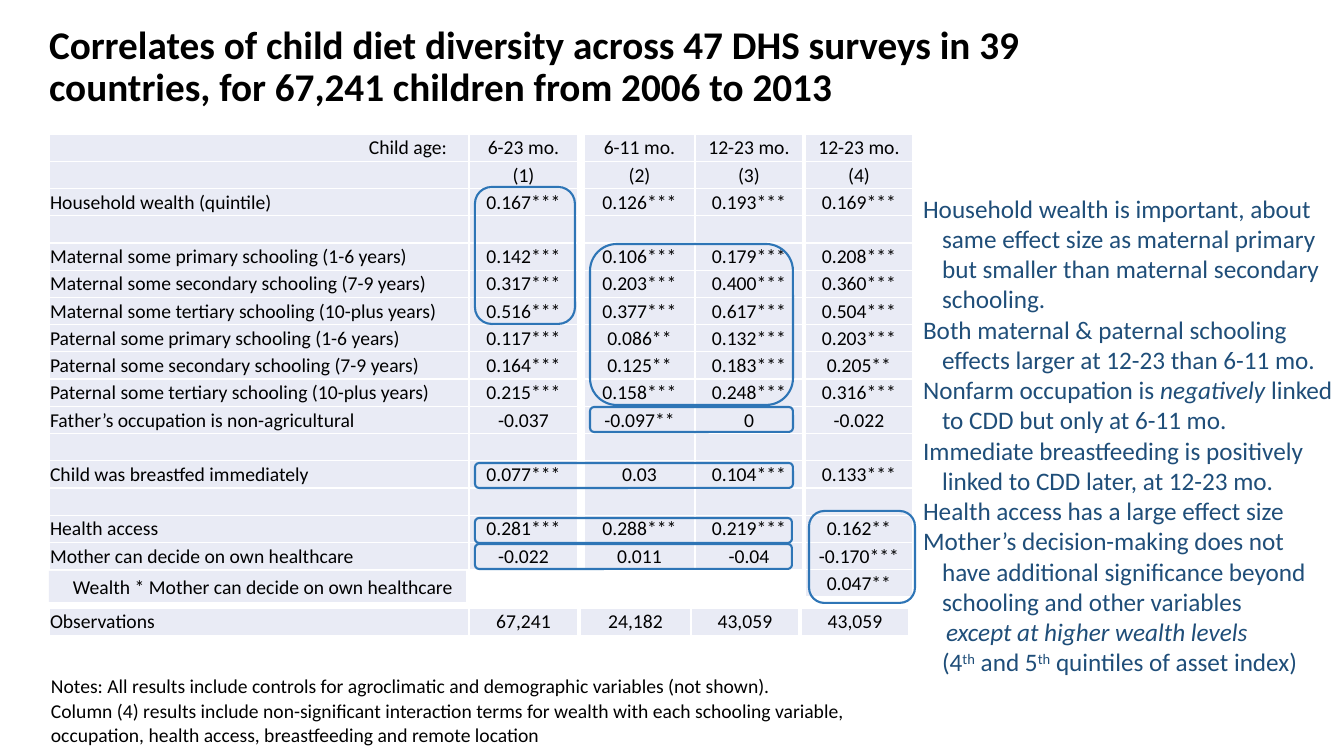
import pptx
import pptx.util
import pptx.dml.color
import pptx.enum.shapes
import pptx.enum.text
import pptx.oxml
import pptx.oxml.ns

TITLE = ("Correlates of child diet diversity across 47 DHS surveys in 39 "
         "countries, for 67,241 children from 2006 to 2013")
RESULTS = [
    ("Child age:", "6-23 mo.", "6-11 mo.", "12-23 mo.", "12-23 mo."),
    ("", "(1)", "(2)", "(3)", "(4)"),
    ("Household wealth (quintile)", "0.167***", "0.126***", "0.193***", "0.169***"),
    ("", "", "", "", ""),
    ("Maternal some primary schooling (1-6 years)", "0.142***", "0.106***", "0.179***", "0.208***"),
    ("Maternal some secondary schooling (7-9 years)", "0.317***", "0.203***", "0.400***", "0.360***"),
    ("Maternal some tertiary schooling (10-plus years)", "0.516***", "0.377***", "0.617***", "0.504***"),
    ("Paternal some primary schooling (1-6 years)", "0.117***", "0.086**", "0.132***", "0.203***"),
    ("Paternal some secondary schooling (7-9 years)", "0.164***", "0.125**", "0.183***", "0.205**"),
    ("Paternal some tertiary schooling (10-plus years)", "0.215***", "0.158***", "0.248***", "0.316***"),
    ("Father’s occupation is non-agricultural", "-0.037", "-0.097**", "0", "-0.022"),
    ("", "", "", "", ""),
    ("Child was breastfed immediately", "0.077***", "0.03", "0.104***", "0.133***"),
    ("", "", "", "", ""),
    ("Health access", "0.281***", "0.288***", "0.219***", "0.162**"),
    ("Mother can decide on own healthcare", "-0.022", "0.011", "-0.04", "-0.170***"),
]
INTERACTION = ("Wealth * Mother can decide on own healthcare", "", "", "", "0.047**")
OBSERVATIONS = ("Observations", "67,241", "24,182", "43,059", "43,059")
FINDINGS = [
    (19, -19, [("Household wealth is important, about same effect size as maternal "
                "primary but smaller than maternal secondary schooling.", "")]),
    (19, -19, [("Both maternal & paternal schooling effects larger at 12-23 than 6-11 mo.", "")]),
    (19, -19, [("Nonfarm occupation is ", ""), ("negatively ", "italic"),
               ("linked to CDD but only at 6-11 mo.", "")]),
    (19, -19, [("Immediate breastfeeding is positively linked to CDD later, at 12-23 mo.", "")]),
    (19, -19, [("Health access has a large effect size", "")]),
    (19, -19, [("Mother’s decision-making does not have additional significance "
                "beyond schooling and other variables", "")]),
    (23, 0, [("except at higher wealth levels", "italic")]),
    (19, 0, [("(4", ""), ("th", "super"), (" and 5", ""), ("th", "super"),
             (" quintiles of asset index)", "")]),
]
NOTES = [
    (669, 34, "Notes: All results include controls for agroclimatic and demographic "
              "variables (not shown)."),
    (694, 57, "Column (4) results include non-significant interaction terms for wealth with "
              "each schooling variable, occupation, health access, breastfeeding and remote location"),
]
COLUMN_GROUPS = [
    {"columns": (0, 1), "widths": (420, 109), "left": 49, "total_left": 49},
    {"columns": (2, 3), "widths": (111, 108), "left": 584, "total_left": 580},
    {"columns": (4,), "widths": (108,), "left": 805, "total_left": 801},
]
HIGHLIGHTS = [
    (475, 187, 100, 137), (590, 244, 203, 161), (590, 407, 203, 25),
    (475, 463, 318, 25), (475, 518, 317, 25), (475, 544, 317, 25),
    (809, 511, 106, 92),
]
COLORS = {"text": "000000", "finding": "1F4E79", "cell": "E9EBF5",
          "border": "FFFFFF", "highlight": "2E75B6"}
FONT = "Calibri"
SCALE = 914400 / 100.8
RESULTS_TOP, TOTALS_TOP, TABLE_HEIGHT = 134, 608, 436
ALIGN = pptx.enum.text.PP_ALIGN
ANCHOR = pptx.enum.text.MSO_ANCHOR
SHAPES = pptx.enum.shapes.MSO_SHAPE


def px(length):
    return pptx.util.Emu(round(length * SCALE))


def box(left, top, width, height):
    return px(left), px(top), px(width), px(height)


def rgb(name):
    return pptx.dml.color.RGBColor.from_string(COLORS[name])


def write(frame, content, size=14, color="text", bold=False, align=ALIGN.LEFT,
          anchor=ANCHOR.TOP, spacing=None):
    paragraphs = [(0, 0, [(content, "")])] if isinstance(content, str) else content
    frame.word_wrap = True
    frame.vertical_anchor = anchor
    for index, (margin, indent, runs) in enumerate(paragraphs):
        paragraph = frame.paragraphs[0] if index == 0 else frame.add_paragraph()
        properties = paragraph._p.get_or_add_pPr()
        properties.set("marL", str(px(margin)))
        properties.set("indent", str(px(indent)))
        properties.append(pptx.oxml.parse_xml(
            f'<a:buNone {pptx.oxml.ns.nsdecls("a")}/>'))
        paragraph.alignment = align
        paragraph.space_before = pptx.util.Pt(0)
        paragraph.line_spacing = spacing
        for text, style in runs:
            run = paragraph.add_run()
            run.text = text
            run.font.name = FONT
            run.font.size = pptx.util.Pt(size)
            run.font.bold = bold
            run.font.italic = style == "italic"
            run.font.color.rgb = rgb(color)
            if style == "super":
                run._r.get_or_add_rPr().set("baseline", "30000")


def style_cell(cell, text, align, right_inset):
    cell.margin_left = cell.margin_top = px(1)
    cell.margin_right, cell.margin_bottom = px(right_inset), 0
    cell.vertical_anchor = ANCHOR.MIDDLE
    properties = cell._tc.get_or_add_tcPr()
    for side in ("lnL", "lnR", "lnT", "lnB"):
        properties.append(pptx.oxml.parse_xml(
            f'<a:{side} {pptx.oxml.ns.nsdecls("a")} w="12700"><a:solidFill>'
            f'<a:srgbClr val="{COLORS["border"]}"/></a:solidFill></a:{side}>'))
    cell.fill.solid()
    cell.fill.fore_color.rgb = rgb("cell")
    if text:
        write(cell.text_frame, text, align=align, anchor=ANCHOR.MIDDLE)
    else:
        cell.text_frame.paragraphs[0]._p.append(pptx.oxml.parse_xml(
            f'<a:endParaRPr {pptx.oxml.ns.nsdecls("a")} sz="1400"/>'))


def add_results(slide, rows, group, left, top):
    columns, widths = group["columns"], group["widths"]
    row_height = TABLE_HEIGHT / len(RESULTS)
    table = slide.shapes.add_table(
        len(rows), len(columns),
        *box(left, top, sum(widths), row_height * len(rows))).table
    table.first_row = table.horz_banding = False
    for column, width in zip(table.columns, widths):
        column.width = px(width)
    for row_index, row in enumerate(rows):
        table.rows[row_index].height = px(row_height)
        for position, column in enumerate(columns):
            text = row[column]
            age_label = text == RESULTS[0][0]
            align = ALIGN.CENTER if column else ALIGN.RIGHT if age_label else ALIGN.LEFT
            style_cell(table.cell(row_index, position), text, align, 22 if age_label else 1)


def add_outline(slide, kind, bounds):
    shape = slide.shapes.add_shape(kind, *box(*bounds))
    shape.shadow.inherit = False
    shape.fill.background()
    shape.line.fill.background()
    return shape


def main():
    deck = pptx.Presentation()
    deck.slide_width, deck.slide_height = px(1344), px(756)
    slide = deck.slides.add_slide(deck.slide_layouts[1])

    title, findings = slide.placeholders
    for holder, bounds in ((title, (39, 15, 1140, 105)), (findings, (913, 188, 431, 499))):
        holder.left, holder.top, holder.width, holder.height = box(*bounds)
        holder.text_frame.auto_size = pptx.enum.text.MSO_AUTO_SIZE.NONE
    write(title.text_frame, TITLE, size=28, bold=True, anchor=ANCHOR.MIDDLE, spacing=0.9)
    write(findings.text_frame, FINDINGS, size=18, color="finding")

    for group in COLUMN_GROUPS:
        rows = RESULTS + [INTERACTION] if 4 in group["columns"] else RESULTS
        add_results(slide, rows, group, group["left"], RESULTS_TOP)
        add_results(slide, [OBSERVATIONS], group, group["total_left"], TOTALS_TOP)

    interaction = add_outline(slide, SHAPES.RECTANGLE, (49, 571, 417, 31))
    interaction.fill.solid()
    interaction.fill.fore_color.rgb = rgb("cell")
    interaction.text_frame.margin_left = px(24)
    write(interaction.text_frame, INTERACTION[0], anchor=ANCHOR.MIDDLE)

    for bounds in HIGHLIGHTS:
        highlight = add_outline(slide, SHAPES.ROUNDED_RECTANGLE, bounds)
        highlight.line.color.rgb = rgb("highlight")
        highlight.line.width = pptx.util.Pt(1.5)

    for top, height, text in NOTES:
        note = slide.shapes.add_textbox(*box(41, top, 852, height))
        write(note.text_frame, text)

    deck.save("out.pptx")


if __name__ == "__main__":
    main()
